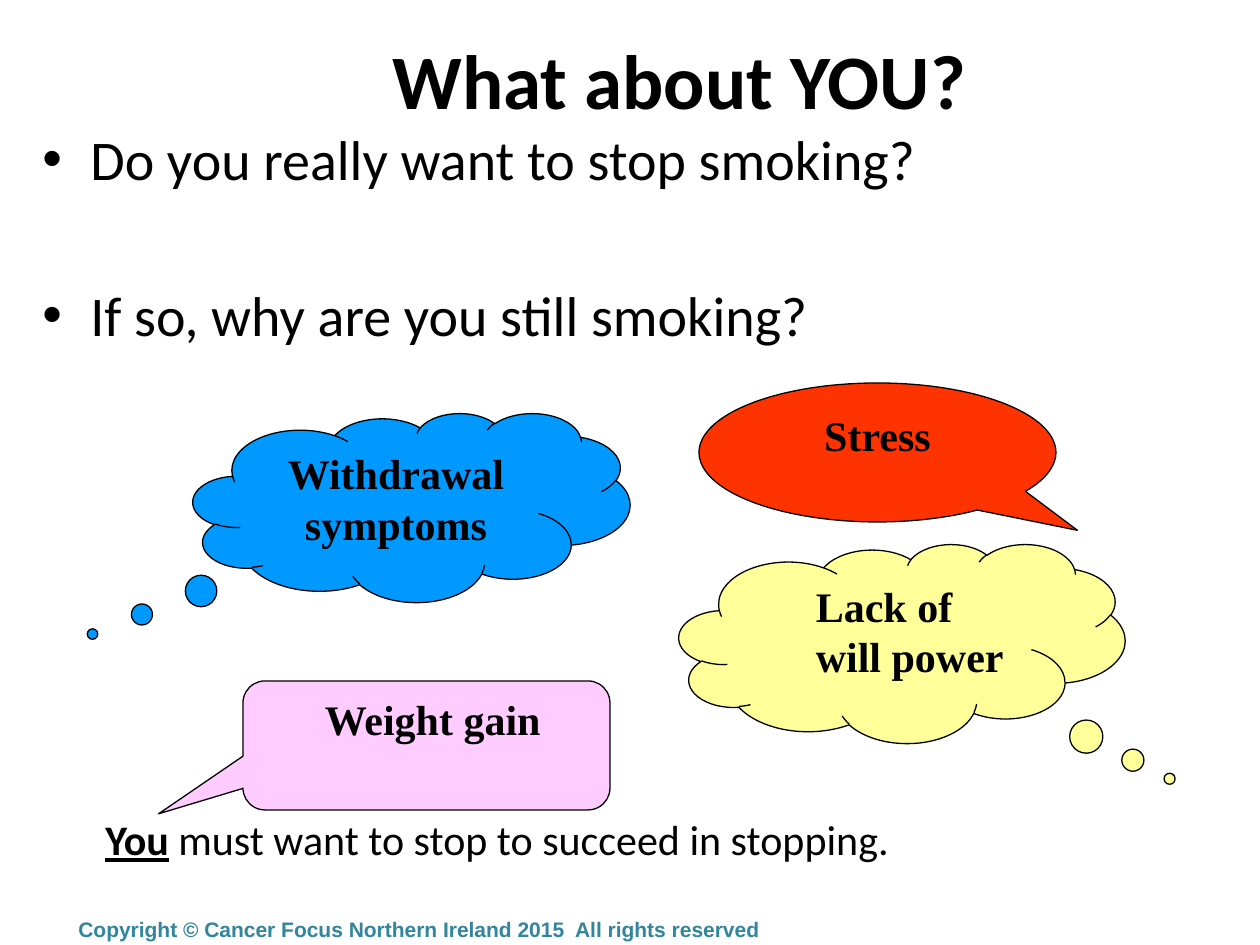
from lxml import etree
from pptx import Presentation
from pptx import util as u
from pptx.dml.color import RGBColor
from pptx.enum import shapes, text
from pptx.oxml import ns

EMU_PER_PX = 914400 / 126
BLACK = "000000"


def px(n):
    return u.Emu(round(n * EMU_PER_PX))


def colour(value):
    return RGBColor.from_string(value)


def place(sp, box):
    sp.left, sp.top, sp.width, sp.height = map(px, box)


def write(p, value, size, font="Calibri", fill=BLACK, bold=False, underline=False):
    r = p.add_run()
    r.text = value
    f = r.font
    f.size, f.name, f.bold, f.underline = u.Pt(size), font, bold, underline
    f.color.rgb = colour(fill)


def indent(p, left, hanging=0, bullet=None):
    pPr = p._p.get_or_add_pPr()
    pPr.set("marL", str(px(left)))
    pPr.set("indent", str(-px(hanging)))
    if bullet:
        etree.SubElement(pPr, ns.qn("a:buFont")).set("typeface", "Arial")
        etree.SubElement(pPr, ns.qn("a:buChar")).set("char", bullet)


def add_title(s, value, box):
    sp = s.shapes.title
    place(sp, box)
    tf = sp.text_frame
    tf.vertical_anchor = text.MSO_ANCHOR.MIDDLE
    p = tf.paragraphs[0]
    p.alignment = text.PP_ALIGN.CENTER
    write(p, value, 44, bold=True)


def add_text_box(s, box):
    sp = s.shapes.add_textbox(*map(px, box))
    sp.text_frame.word_wrap = True
    return sp.text_frame


def add_body(s, box):
    tf = add_text_box(s, box)
    question = tf.paragraphs[0]
    indent(question, 48, 48, "•")
    write(question, "Do you really want to stop smoking?", 32)

    question = tf.add_paragraph()
    indent(question, 48, 48, "•")
    question.space_before = u.Pt(51)
    write(question, "If so, why are you still smoking?", 32)

    closing = tf.add_paragraph()
    indent(closing, 63)
    closing.space_before = u.Pt(266)
    write(closing, "You", 24, bold=True, underline=True)
    write(closing, " must want to stop to succeed in stopping.", 24)


def add_callout(s, kind, box, adjustments, fill, label, centred):
    sp = s.shapes.add_shape(kind, *map(px, box))
    for i, value in enumerate(adjustments):
        sp.adjustments[i] = value
    sp.shadow.inherit = False
    sp.fill.solid()
    sp.fill.fore_color.rgb = colour(fill)
    sp.line.color.rgb = colour(BLACK)
    sp.line.width = u.Pt(0.75)
    tf = sp.text_frame
    tf.word_wrap = True
    tf.vertical_anchor = text.MSO_ANCHOR.TOP
    p = tf.paragraphs[0]
    p.alignment = text.PP_ALIGN.CENTER if centred else text.PP_ALIGN.LEFT
    if not centred:
        indent(p, 63)
    write(p, label, 24, font="Times New Roman", bold=True)


def main():
    prs = Presentation()
    prs.slide_width, prs.slide_height = px(1260), px(945)
    s = prs.slides.add_slide(prs.slide_layouts[5])
    add_title(s, "What about YOU?", (144, 0, 1071, 158))
    add_body(s, (30, 118, 1200, 780))

    kinds = shapes.MSO_SHAPE
    callouts = [
        (kinds.OVAL_CALLOUT, (699, 383, 357, 139), (0.56, 0.56),
         "FF3300", "Stress", True),
        (kinds.ROUNDED_RECTANGULAR_CALLOUT, (243, 681, 367, 129), (-0.73, 0.53, 0.17),
         "FFCCFF", "Weight gain", False),
        (kinds.CLOUD_CALLOUT, (193, 413, 437, 189), (-0.73, 0.67),
         "0099FF", "Withdrawal symptoms", True),
        (kinds.CLOUD_CALLOUT, (679, 544, 446, 199), (0.6, 0.68),
         "FFFF99", "Lack of will power", False),
    ]
    for callout in callouts:
        add_callout(s, *callout)

    footer = add_text_box(s, (66, 910, 1169, 35))
    write(footer.paragraphs[0],
          "Copyright © Cancer Focus Northern Ireland 2015  All rights reserved",
          12, font="Arial", fill="31859C", bold=True)
    prs.save("out.pptx")


if __name__ == "__main__":
    main()
